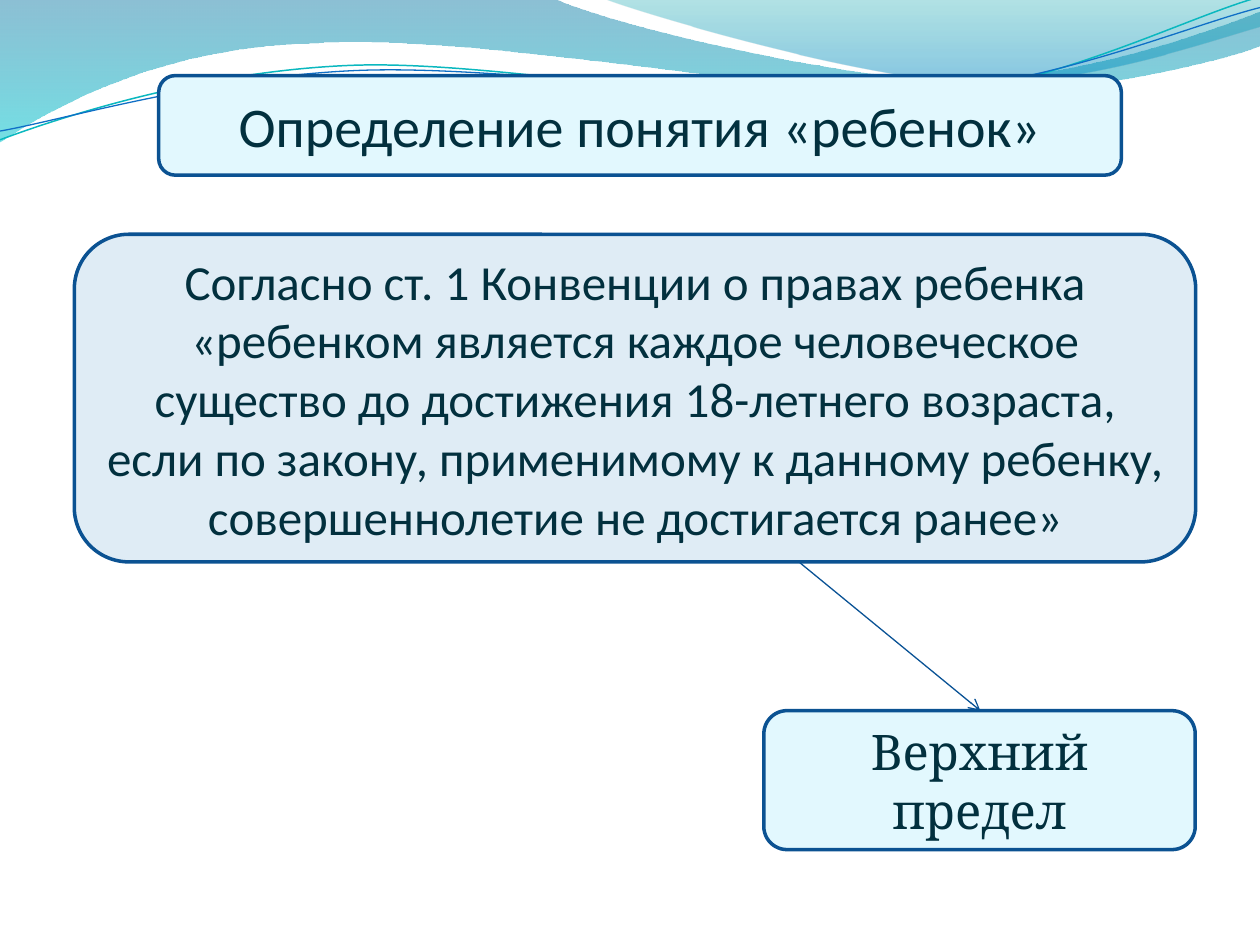
"""Build a slide that defines the notion of a child, under a wavy header."""
from math import cos, radians, sin
from pptx import Presentation
from pptx.dml.color import RGBColor as RGB
from pptx.enum.shapes import MSO_CONNECTOR as Link, MSO_SHAPE as Kind
from pptx.enum.text import MSO_ANCHOR as Anchor, PP_ALIGN as Align
from pptx.oxml.ns import qn
from pptx.util import Pt
from lxml.etree import SubElement as Sub

INK = RGB(0x02, 0x30, 0x3E)
EDGE = RGB(0x0B, 0x52, 0x92)
ARROW = RGB(0x09, 0x52, 0x95)
ICE = RGB(0xE2, 0xF8, 0xFE)
MIST = RGB(0xDF, 0xEC, 0xF5)
SEA = RGB(0x00, 0x74, 0xA1)
AQUA = RGB(0x00, 0xC6, 0xCF)
TEAL = RGB(0x00, 0xA1, 0xA9)
SKY = RGB(0x00, 0x8B, 0xBF)
GREEN = RGB(0x0A, 0xB8, 0xBF)
BLUE = RGB(0x0F, 0x6F, 0xC6)

deck = Presentation()
deck.slide_width, deck.slide_height = Pt(720), Pt(540)
slide = deck.slides.add_slide(deck.slide_layouts[6])
shapes = slide.shapes


def trace(frame, start, parts, close, turn=0):
    """Draw an outline of straight (2 numbers) and curved (6 numbers) parts."""
    left, top, width, height = frame
    ends = [(Pt(part[-2]), Pt(part[-1])) for part in parts]
    form = shapes.build_freeform(Pt(start[0]), Pt(start[1]), scale=1.0)
    form.add_line_segments(ends, close=close)
    shape = form.convert_to_shape()
    shape.shadow.inherit = False
    shape.left, shape.top, shape.width, shape.height = map(Pt, frame)
    shape.rotation = -turn
    route = next(shape._element.iter(qn("a:path")))
    route.set("w", str(Pt(width)))
    route.set("h", str(Pt(height)))
    c, s = cos(radians(turn)), sin(radians(turn))
    for node, part in zip(list(route), [start, *parts]):
        if len(part) == 6:
            node.tag = qn("a:cubicBezTo")
        for old in list(node):
            node.remove(old)
        for x, y in zip(part[::2], part[1::2]):
            dx, dy = x - left - width / 2, y - top - height / 2
            Sub(node, qn("a:pt"), x=str(Pt(dx * c - dy * s + width / 2)),
                y=str(Pt(dx * s + dy * c + height / 2)))
    return shape


waves = [
    ((-0.7, -0.7, 721.4, 82.1), (0, 0),
     [(316.8, -0.7), (342.7, 12.2, 478.1, 45.4, 545.8, 45.4),
      (614.2, 45.4, 689.8, 18.7, 720, 6.5), (720.7, 25.9),
      (707.8, 31.7, 626.4, 54.7, 537.1, 54), (447.8, 54, 275, 20.2, 185, 24.5),
      (92.9, 25.9, 33.1, 59.8, -0.7, 81.4), (0, 0)],
     [(0, SEA, 45), (1, AQUA, 55)]),
    ((344.9, -0.7, 375.1, 50.4), (344.9, -0.7),
     [(366.5, 7.9, 491, 44.6, 553.7, 46.8),
      (616.3, 49.7, 691.9, 23, 720, 15.1), (720, 0), (344.9, -0.7)],
     [(0, TEAL, 30), (0.8, SKY, 45)]),
]
for frame, start, parts, stops in waves:
    wave = trace(frame, start, parts, True)
    wave.line.fill.background()
    wave.fill.gradient()
    wave.fill.gradient_angle = 270
    for stop, (place, tint, alpha) in zip(wave.fill.gradient_stops, stops):
        stop.position = place
        stop.color.rgb = tint
    tints = wave.fill._xPr.iter(qn("a:srgbClr"))
    for node, (place, tint, alpha) in zip(tints, stops):
        Sub(node, qn("a:alpha"), val=str(alpha * 1000))

curves = [
    ((-1.4, 15.8, 721.4, 51.1), (0, 79.9),
     [(34.6, 67, 113.8, 41, 199.4, 37.4), (284.4, 33.8, 427, 64.1, 513.4, 57.6),
      (599.8, 51.1, 675.4, 10.8, 718.6, -1.4)], GREEN, 0.85),
    ((-1.4, 21.6, 722.2, 41.8), (0, 74.9),
     [(33.8, 69.1, 118.1, 43.9, 203.8, 40.3), (290.2, 36.7, 429.8, 60.5, 516.2, 54),
      (601.9, 48.2, 677.5, 15.1, 720, 4.3)], BLUE, 0.75),
]
for frame, start, parts, tint, width in curves:
    curve = trace(frame, start, parts, False, 2.7)
    curve.fill.background()
    curve.line.color.rgb = tint
    curve.line.width = Pt(width)

boxes = [
    ((90.7, 43.2, 550.1, 56.9), ICE, {"name": "Calibri", "size": Pt(32)},
     ["Определение понятия «ребенок»"]),
    ((42.5, 133.9, 640.8, 187.2), MIST, {"name": "Calibri", "size": Pt(28)},
     ["Согласно ст. 1 Конвенции о правах ребенка",
      "«ребенком является каждое человеческое существо до достижения 18-летнего "
      "возраста, если по закону, применимому к данному ребенку, "
      "совершеннолетие не достигается ранее»"]),
    ((436.5, 406.1, 246.5, 79.4), ICE, {"name": "Cambria", "size": Pt(28)},
     ["Верхний предел"]),
]
for place, tint, style, lines in boxes:
    box = shapes.add_shape(Kind.ROUNDED_RECTANGLE, *map(Pt, place))
    box.shadow.inherit = False
    box.fill.solid()
    box.fill.fore_color.rgb = tint
    box.line.color.rgb = EDGE
    box.line.width = Pt(2)
    frame = box.text_frame
    frame.word_wrap = True
    frame.vertical_anchor = Anchor.MIDDLE
    for i, line in enumerate(lines):
        para = frame.add_paragraph() if i else frame.paragraphs[0]
        para.alignment = Align.CENTER
        run = para.add_run()
        run.text = line
        run.font.color.rgb = INK
        for key, value in style.items():
            setattr(run.font, key, value)

arrow = shapes.add_connector(Link.STRAIGHT, Pt(456.5), Pt(321.1), Pt(560.2), Pt(406.1))
arrow.line.color.rgb = ARROW
arrow.line.width = Pt(0.75)
Sub(arrow.line._get_or_add_ln(), qn("a:tailEnd"), type="arrow")
Sub(arrow._element.spPr, qn("a:effectLst"))

deck.save("out.pptx")
